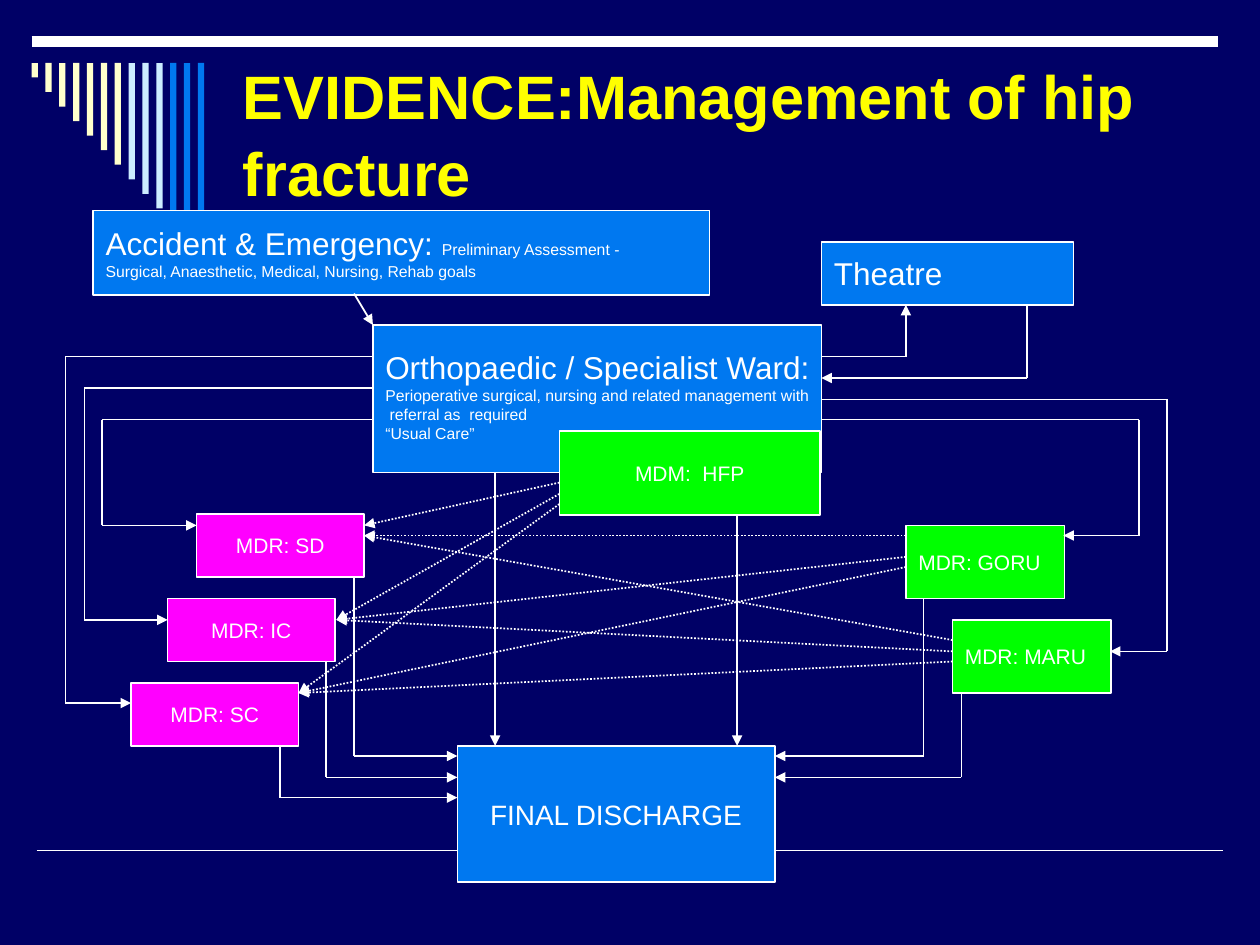
"""Build a slide that charts the hip fracture care pathway."""
import pptx
import pptx.util
import pptx.dml.color
import pptx.enum.dml
import pptx.enum.shapes
import pptx.enum.text
import pptx.oxml.ns
import lxml.etree

Inches = pptx.util.Inches
Pt = pptx.util.Pt
ANCHOR = pptx.enum.text.MSO_ANCHOR
ALIGN = pptx.enum.text.PP_ALIGN
COLORS = {
    "navy": "000066", "white": "FFFFFF", "yellow": "FFFF00", "blue": "0078F0",
    "green": "00FF00", "magenta": "FF00FF", "cream": "FFFFCC", "pale": "CCECFF",
}
TITLE = "EVIDENCE:Management of hip fracture"
STRIPES = ["cream"] * 7 + ["pale"] * 3 + ["blue"] * 3
RULES = [((0.29, 6.75), (9.71, 6.75), 1), ((0.25, 0.33), (9.67, 0.33), 6)]

BOXES = [
    ("blue", (0.74, 1.67, 4.89, 0.67), "left", [
        [("Accident & Emergency: ", 18), ("Preliminary Assessment -", 9)],
        [("Surgical, Anaesthetic, Medical, Nursing, Rehab goals", 9)]]),
    ("blue", (2.96, 2.58, 3.56, 1.17), "top", [
        [("Orthopaedic / Specialist Ward:", 18)],
        [("Perioperative surgical, nursing and related management with", 9)],
        [(" referral as  required", 9)],
        [("“Usual Care”", 9)]]),
    ("blue", (6.52, 1.92, 2, 0.5), "left", [[("Theatre", 18)]]),
    ("green", (7.19, 4.17, 1.26, 0.58), "left", [[("MDR: GORU", 12)]]),
    ("green", (7.56, 4.92, 1.26, 0.58), "left", [[("MDR: MARU", 12)]]),
    ("green", (4.44, 3.42, 2.07, 0.67), "center", [[("MDM:  HFP", 12)]]),
    ("magenta", (1.56, 4.08, 1.33, 0.5), "center", [[("MDR: SD", 12)]]),
    ("magenta", (1.33, 4.75, 1.33, 0.5), "center", [[("MDR: IC", 12)]]),
    ("magenta", (1.04, 5.42, 1.33, 0.5), "center", [[("MDR: SC", 12)]]),
    ("blue", (3.63, 5.92, 2.52, 1.08), "center", [[("FINAL DISCHARGE", 16)]]),
]

ROUTES = [
    [(2.81, 2.33), (2.96, 2.58)],
    [(6.52, 2.83), (7.19, 2.83), (7.19, 2.42)],
    [(8.15, 2.42), (8.15, 3), (6.52, 3)],
    [(6.52, 3.17), (9.26, 3.17), (9.26, 5.17), (8.81, 5.17)],
    [(6.52, 3.33), (9.04, 3.33), (9.04, 4.25), (8.44, 4.25)],
    [(2.96, 3.33), (0.81, 3.33), (0.81, 4.17), (1.56, 4.17)],
    [(2.96, 3.08), (0.67, 3.08), (0.67, 4.92), (1.33, 4.92)],
    [(2.96, 2.83), (0.52, 2.83), (0.52, 5.58), (1.04, 5.58)],
    [(2.81, 4.58), (2.81, 6), (3.63, 6)],
    [(2.59, 5.25), (2.59, 6.17), (3.63, 6.17)],
    [(2.22, 5.92), (2.22, 6.33), (3.63, 6.33)],
    [(7.33, 4.75), (7.33, 6), (6.15, 6)],
    [(7.63, 5.5), (7.63, 6.17), (6.15, 6.17)],
    [(5.85, 4.08), (5.85, 5.92)],
    [(3.93, 3.75), (3.93, 5.92)],
]

REFERRAL_TARGETS = [(2.89, 4.25), (2.67, 4.92), (2.37, 5.5)]
MEETING_TARGETS = [(2.89, 4.17)] + REFERRAL_TARGETS[1:]
REFERRALS = [
    (4.44, (3.83, 3.92, 4), MEETING_TARGETS),
    (7.19, (4.25, 4.42, 4.5), REFERRAL_TARGETS),
    (7.56, (5.08, 5.17, 5.25), REFERRAL_TARGETS),
]


def rgb(name):
    return pptx.dml.color.RGBColor.from_string(COLORS[name])


def add_rectangle(slide, place, color):
    kind = pptx.enum.shapes.MSO_SHAPE.RECTANGLE
    box = slide.shapes.add_shape(kind, *map(Inches, place))
    box.shadow.inherit = False
    box.fill.solid()
    box.fill.fore_color.rgb = rgb(color)
    box.line.fill.background()
    return box


def add_span(para, text, size, color="white", bold=False):
    span = para.add_run()
    span.text = text
    span.font.name = "Arial"
    span.font.size = Pt(size)
    span.font.bold = bold
    span.font.color.rgb = rgb(color)


def add_box(slide, color, place, layout, lines):
    box = add_rectangle(slide, place, color)
    box.line.color.rgb = rgb("white")
    box.line.width = Pt(1)
    frame = box.text_frame
    frame.word_wrap = False
    frame.vertical_anchor = ANCHOR.MIDDLE
    if layout == "top":
        frame.vertical_anchor = ANCHOR.TOP
        frame.margin_top = Inches(0.18)
    for index, line in enumerate(lines):
        para = frame.add_paragraph() if index else frame.paragraphs[0]
        para.alignment = ALIGN.CENTER if layout == "center" else ALIGN.LEFT
        for text, size in line:
            add_span(para, text, size)


def add_line(slide, start, end, width=1, arrow=False, dotted=False):
    kind = pptx.enum.shapes.MSO_CONNECTOR.STRAIGHT
    line = slide.shapes.add_connector(kind, *map(Inches, start + end))
    line.line.color.rgb = rgb("white")
    line.line.width = Pt(width)
    if dotted:
        line.line.dash_style = pptx.enum.dml.MSO_LINE.ROUND_DOT
    qn = pptx.oxml.ns.qn
    if arrow:
        outline = line.line._get_or_add_ln()
        lxml.etree.SubElement(outline, qn("a:tailEnd"), type="triangle")
    lxml.etree.SubElement(line._element.spPr, qn("a:effectLst"))


def add_title(slide):
    box = slide.shapes.add_textbox(*map(Inches, (1.83, 0.42, 7.56, 1.25)))
    frame = box.text_frame
    frame.word_wrap = True
    frame.vertical_anchor = ANCHOR.MIDDLE
    para = frame.paragraphs[0]
    para.line_spacing = 1.05
    add_span(para, TITLE, 35, "yellow", True)


def main():
    deck = pptx.Presentation()
    deck.slide_width, deck.slide_height = Inches(10), Inches(7.5)
    slide = deck.slides.add_slide(deck.slide_layouts[6])
    slide.background.fill.solid()
    slide.background.fill.fore_color.rgb = rgb("navy")
    for start, end, width in RULES:
        add_line(slide, start, end, width)
    for index, color in enumerate(STRIPES):
        height = 1.5 * (index + 1) / len(STRIPES)
        add_rectangle(slide, (0.25 + 0.11 * index, 0.5, 0.05, height), color)
    add_title(slide)
    for box in BOXES:
        add_box(slide, *box)
    for route in ROUTES:
        for start, end in zip(route, route[1:]):
            add_line(slide, start, end, arrow=end == route[-1])
    for left, tops, targets in REFERRALS:
        for top, target in zip(tops, targets):
            add_line(slide, (left, top), target, arrow=True, dotted=True)
    deck.save("out.pptx")


if __name__ == "__main__":
    main()
